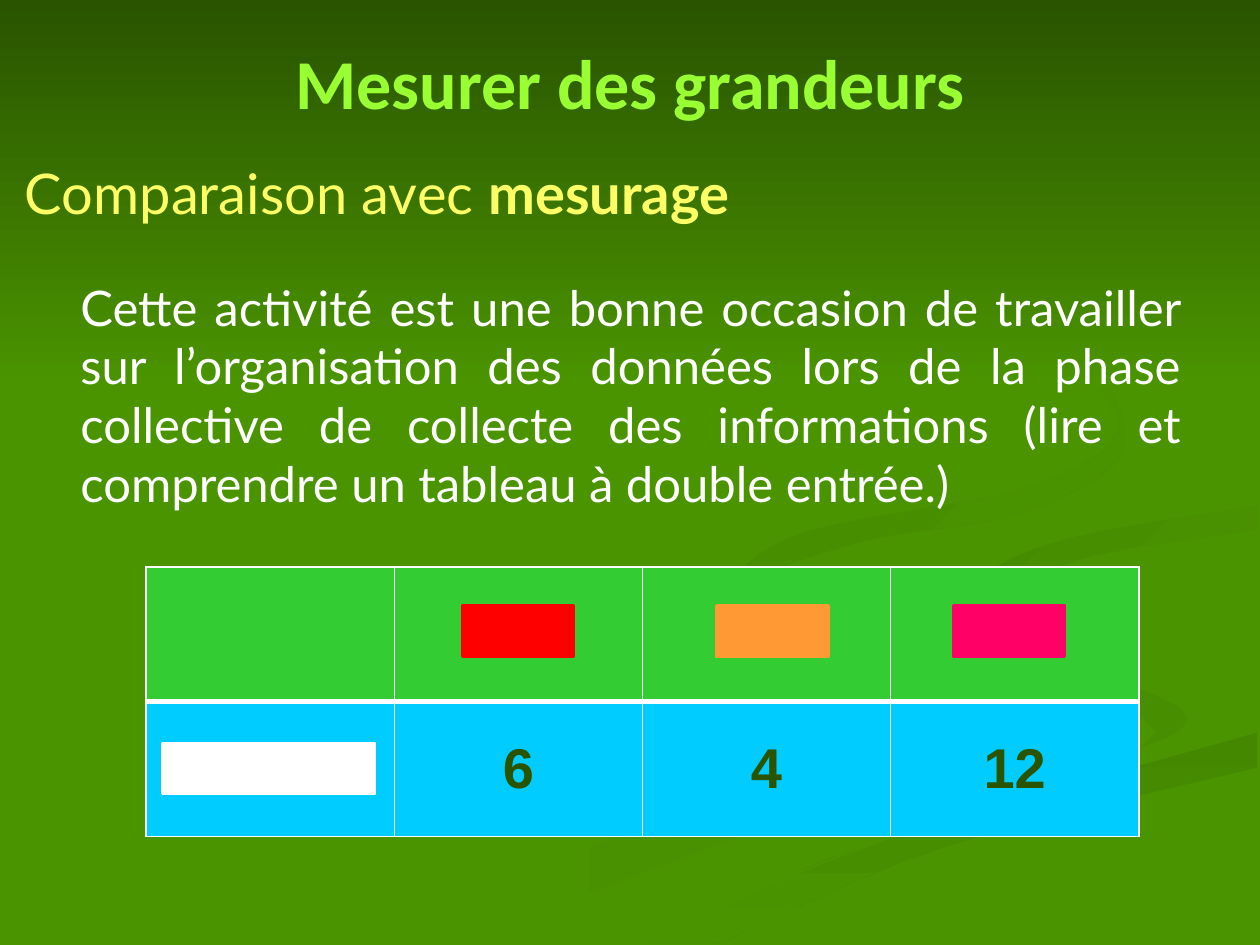
from lxml import etree
from pptx import Presentation
from pptx import util as u
from pptx.dml.color import RGBColor
from pptx.enum import shapes, text
from pptx.oxml import ns

GREEN, DARK_GREEN, WHITE = "4A9400", "2A5400", "FFFFFF"

# Background ribbons: fill colours, gradient angle, edges drawn as smooth curves
RIBBONS = [
    ((GREEN, "478E00"), 0, [
        [(5.75, 4.6), (6.2, 5), (7.45, 5.38), (8, 5.81), (6.5, 6.4), (3.6, 7.49)],
        [(3, 7.49), (5, 6.6), (7.5, 5.94), (7.8, 5.54), (6.1, 4.99)]]),
    ((GREEN, "478E00"), 45, [
        [(7.24, 4.64), (7.9, 5.09), (9.05, 5.4), (9.43, 5.7), (8.94, 6.05)],
        [(9.18, 5.81), (8.7, 5.44), (7.5, 5.05)]]),
    (("448800", GREEN), 90, [
        [(5.03, 7.49), (6.6, 6.81), (8.3, 6.29), (9.98, 5.81)],
        [(9.98, 6.09), (7.5, 6.72), (5.7, 7.49)]]),
    ((GREEN,), 0, [
        [(9.99, 3.87), (8.5, 4.11), (7.25, 4.64), (8.1, 5.15), (9.43, 5.7),
         (8.1, 6.25), (4.77, 7.49)],
        [(5.1, 7.49), (7, 6.68), (9.99, 5.81)],
        [(9.99, 5.38), (8.5, 5.03), (7.81, 4.63), (8.4, 4.3), (9.99, 4.02)]]),
    (("468C00", GREEN), 45, [
        [(9.98, 4.02), (8.5, 4.27), (7.81, 4.6), (8.26, 4.96)],
        [(8.05, 4.74), (8.6, 4.43), (9.98, 4.2)]]),
    (("458A00", GREEN), 45, [
        [(7.62, 2.33), (8.65, 2.91), (8.9, 3.6), (8.1, 4.07), (6.83, 4.3),
         (5.95, 4.65), (6.22, 5)],
        [(5.77, 4.62), (6.4, 4.22), (8.2, 3.86), (8.89, 3.35), (8.25, 2.66)]]),
]


def color(value):
    return RGBColor.from_string(value)


def smooth(points, steps=6):
    """Catmull-Rom curve through the points, as a list of points."""
    padded = [points[0], *points, points[-1]]
    curve = [points[0]]
    for a, b, c, d in zip(padded, padded[1:], padded[2:], padded[3:]):
        for step in range(1, steps + 1):
            t = step / steps
            curve.append(tuple(
                q + t / 2 * (r - p + t * (2 * p - 5 * q + 4 * r - s
                                          + t * (3 * (q - r) + s - p)))
                for p, q, r, s in zip(a, b, c, d)))
    return curve


def paint(shape, colors, angle=0):
    """Fill with one colour, or with a gradient turning clockwise by angle."""
    shape.shadow.inherit = False
    shape.line.fill.background()
    if len(colors) == 1:
        shape.fill.solid()
        shape.fill.fore_color.rgb = color(colors[0])
        return
    shape.fill.gradient()
    shape.fill.gradient_angle = (360 - angle) % 360
    for stop, value in zip(shape.fill.gradient_stops, colors):
        stop.color.rgb = color(value)


def add_rectangle(slide, *box):
    return slide.shapes.add_shape(shapes.MSO_SHAPE.RECTANGLE, *map(u.Inches, box))


def add_runs(paragraph, runs, size, font, value, alignment):
    paragraph.alignment = alignment
    for words, bold in runs:
        run = paragraph.add_run()
        run.text = words
        run.font.size, run.font.name, run.font.bold = u.Pt(size), font, bold
        run.font.color.rgb = color(value)


def add_background(slide, width, height):
    slide.background.fill.solid()
    slide.background.fill.fore_color.rgb = color(GREEN)
    for colors, angle, edges in RIBBONS:
        points = [(u.Inches(x), u.Inches(y)) for edge in edges for x, y in smooth(edge)]
        builder = slide.shapes.build_freeform(*points[0])
        builder.add_line_segments(points[1:], close=True)
        paint(builder.convert_to_shape(), colors, angle)
    paint(add_rectangle(slide, 0, 0, width, height), (DARK_GREEN, GREEN), 90)


def add_text(slide, box, runs, size, font, value, alignment,
             anchor=text.MSO_ANCHOR.TOP, spacing=None):
    frame = slide.shapes.add_textbox(*map(u.Inches, box)).text_frame
    frame.word_wrap = True
    frame.vertical_anchor = anchor
    paragraph = frame.paragraphs[0]
    paragraph.line_spacing = spacing
    add_runs(paragraph, runs, size, font, value, alignment)


def set_borders(cell, widths):
    properties = cell._tc.get_or_add_tcPr()
    for position, (side, width) in enumerate(widths.items()):
        line = etree.Element(ns.qn(f"a:{side}"), w=str(u.Pt(width)))
        fill = etree.SubElement(line, ns.qn("a:solidFill"))
        etree.SubElement(fill, ns.qn("a:srgbClr"), val=WHITE)
        properties.insert(position, line)


def add_measure_table(slide, left, top, width, height):
    rows = [("33CC33", ["", "", "", ""]), ("00CCFF", ["", "6", "4", "12"])]
    table = slide.shapes.add_table(2, 4, *map(u.Inches, (left, top, width, height))).table
    table.first_row = table.horz_banding = False
    for row, (fill, values) in enumerate(rows):
        for column, value in enumerate(values):
            cell = table.cell(row, column)
            cell.fill.solid()
            cell.fill.fore_color.rgb = color(fill)
            cell.vertical_anchor = text.MSO_ANCHOR.MIDDLE
            set_borders(cell, {"lnL": 1, "lnR": 1, "lnT": 1 if row == 0 else 3,
                               "lnB": 3 if row == 0 else 1})
            if value:
                add_runs(cell.text_frame.paragraphs[0], [(value, True)], 32,
                         "Arial", DARK_GREEN, text.PP_ALIGN.CENTER)

    # Coloured strips: three units in the header, the measured strip below
    strips = [(6.41, 0.31, 0.88, "FF0066"), (4.53, 0.31, 0.88, "FF9933"),
              (2.51, 0.31, 0.88, "FF0000"), (0.13, 1.4, 1.68, WHITE)]
    for x, y, length, value in strips:
        strip = add_rectangle(slide, left + x, top + y, length, 0.4)
        paint(strip, (value,))
        strip.line.color.rgb = color(value)
        strip.line.width = u.Pt(2)


def main():
    presentation = Presentation()
    presentation.slide_width, presentation.slide_height = u.Inches(10), u.Inches(7.5)
    slide = presentation.slides.add_slide(presentation.slide_layouts[6])
    add_background(slide, 10, 3.08)
    # Title, subtitle and explanation
    add_text(slide, (0.5, 0.3, 9, 0.69), [("Mesurer des grandeurs", True)], 40,
             "Calibri", "99FF33", text.PP_ALIGN.CENTER, text.MSO_ANCHOR.MIDDLE)
    add_text(slide, (0.1, 1.31, 9.8, 0.68),
             [("Comparaison avec ", False), ("mesurage", True)], 32,
             "Lato", "FFFF66", text.PP_ALIGN.LEFT, spacing=0.8)
    add_text(slide, (0.54, 2.15, 8.93, 0.68),
             [("Cette activité est une bonne occasion de travailler sur "
               "l’organisation des données lors de la phase collective de "
               "collecte des informations (lire et comprendre un tableau à "
               "double entrée.)", False)], 28, "Lato", WHITE, text.PP_ALIGN.JUSTIFY)
    add_measure_table(slide, 1.16, 4.5, 7.88, 2.14)
    presentation.save("out.pptx")


if __name__ == "__main__":
    main()
